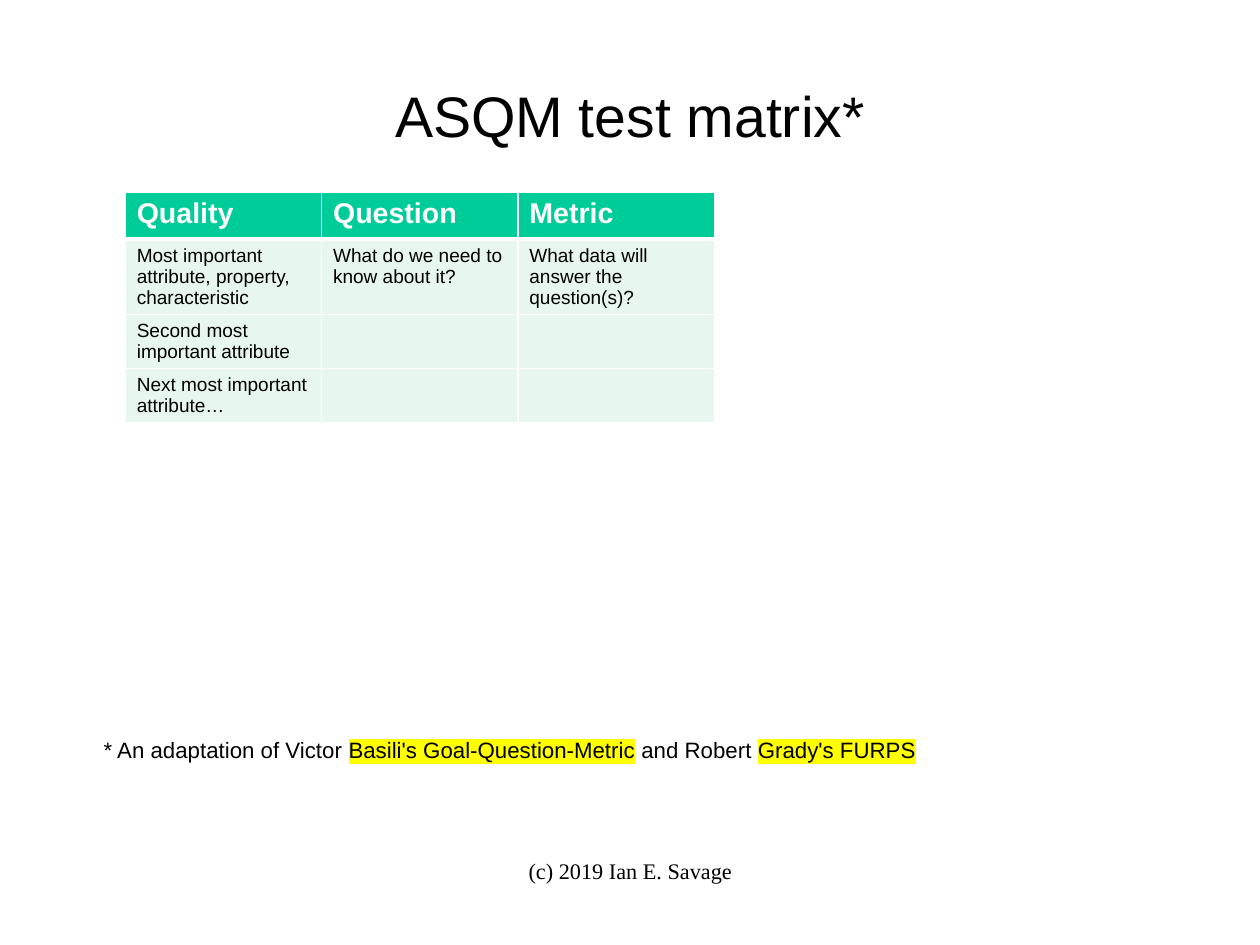
from dataclasses import dataclass

from lxml import etree
from pptx import Presentation, util as u
from pptx.dml.color import RGBColor
from pptx.enum import text as t
from pptx.oxml.ns import qn


@dataclass(frozen=True)
class Theme:
    sans: str = "Arial"
    serif: str = "Times New Roman"
    ink: str = "000000"
    white: str = "FFFFFF"
    head: str = "00CC99"
    band: str = "E7F6EF"
    mark: str = "FFFF00"
    title: int = 36
    label: int = 18
    note: int = 14
    cell: int = 12


T = Theme()
WIDE, HIGH = u.Cm(28), u.Cm(21)
UNIT = WIDE / 100  # square grid, 100 columns by 75 rows

ROWS = [
    ("Quality", "Question", "Metric"),
    ("Most important attribute, property, characteristic",
     "What do we need to know about it?",
     "What data will answer the question(s)?"),
    ("Second most important attribute", "", ""),
    ("Next most important attribute…", "", ""),
]
TALL = [3.72, 5.97, 4.28, 4.28]  # row heights in grid units
NOTE = [("* An adaptation of Victor ", False),
        ("Basili's Goal-Question-Metric", True),
        (" and Robert ", False),
        ("Grady's FURPS", True)]


def grid(*units):
    return [u.Emu(round(n * UNIT)) for n in units]


def write(frame, runs, size, font=T.sans, color=T.ink, bold=False,
          align=t.PP_ALIGN.LEFT, space=0.93):
    """Fill a frame with one paragraph of (words, marked) runs."""
    if isinstance(runs, str):
        runs = [(runs, False)] if runs else []
    para = frame.paragraphs[0]
    para.alignment, para.line_spacing = align, space
    para.font.size = u.Pt(size)
    for words, marked in runs:
        run = para.add_run()
        run.text = words
        face = run.font
        face.size, face.name, face.bold = u.Pt(size), font, bold
        face.color.rgb = RGBColor.from_string(color)
        if marked:
            light = etree.Element(qn("a:highlight"))
            etree.SubElement(light, qn("a:srgbClr"), val=T.mark)
            run._r.rPr.find(qn("a:solidFill")).addnext(light)


def clear(frame, top=0):
    """Set the insets and wrapping of a frame."""
    frame.word_wrap = True
    frame.auto_size = t.MSO_AUTO_SIZE.NONE
    frame.margin_left = frame.margin_right = frame.margin_bottom = 0
    frame.margin_top = u.Inches(top)


def edge(cell, sides):
    """Draw white borders, given as (side, weight) pairs."""
    props = cell._tc.get_or_add_tcPr()
    for at, (side, wide) in enumerate(sides):
        line = etree.Element(qn("a:ln" + side), w=str(u.Pt(wide)))
        fill = etree.SubElement(line, qn("a:solidFill"))
        etree.SubElement(fill, qn("a:srgbClr"), val=T.white)
        props.insert(at, line)


def heading(slide, box):
    shape = slide.shapes.title
    shape.left, shape.top, shape.width, shape.height = grid(*box)
    frame = shape.text_frame
    clear(frame, top=0.03)
    frame.vertical_anchor = t.MSO_ANCHOR.MIDDLE
    write(frame, "ASQM test matrix*", T.title, align=t.PP_ALIGN.CENTER)


def matrix(slide, box):
    count = len(ROWS[0])
    table = slide.shapes.add_table(len(ROWS), count, *grid(*box)).table
    for col in table.columns:
        col.width = grid(box[2] / count)[0]
    for r, (row, tall) in enumerate(zip(ROWS, TALL)):
        table.rows[r].height = grid(tall)[0]
        top = r == 0
        sides = zip("LRTB", (1, 1, 1, 3)) if top else zip("LRB", (1, 1, 1))
        sides = list(sides)
        for c, words in enumerate(row):
            cell = table.cell(r, c)
            cell.fill.solid()
            cell.fill.fore_color.rgb = RGBColor.from_string(
                T.head if top else T.band)
            edge(cell, sides)
            write(cell.text_frame, words, T.label if top else T.cell,
                  color=T.white if top else T.ink, bold=top, space=1.0)


def caption(slide, box, runs, **style):
    frame = slide.shapes.add_textbox(*grid(*box)).text_frame
    clear(frame)
    write(frame, runs, T.note, **style)


def main():
    deck = Presentation()
    deck.slide_width, deck.slide_height = WIDE, HIGH
    deck.element.sldSz.attrib.pop("type", None)  # custom page size
    slide = deck.slides.add_slide(deck.slide_layouts[5])
    heading(slide, (5, 3, 90, 12.5))
    matrix(slide, (9.95, 15.25, 46.74, sum(TALL)))
    # Source note and copyright line
    caption(slide, (8.22, 58.65, 86.74, 3), NOTE)
    caption(slide, (34.2, 68.23, 31.67, 5.2), "(c) 2019 Ian E. Savage",
            font=T.serif, align=t.PP_ALIGN.CENTER, space=0.95)
    deck.save("out.pptx")


if __name__ == "__main__":
    main()
